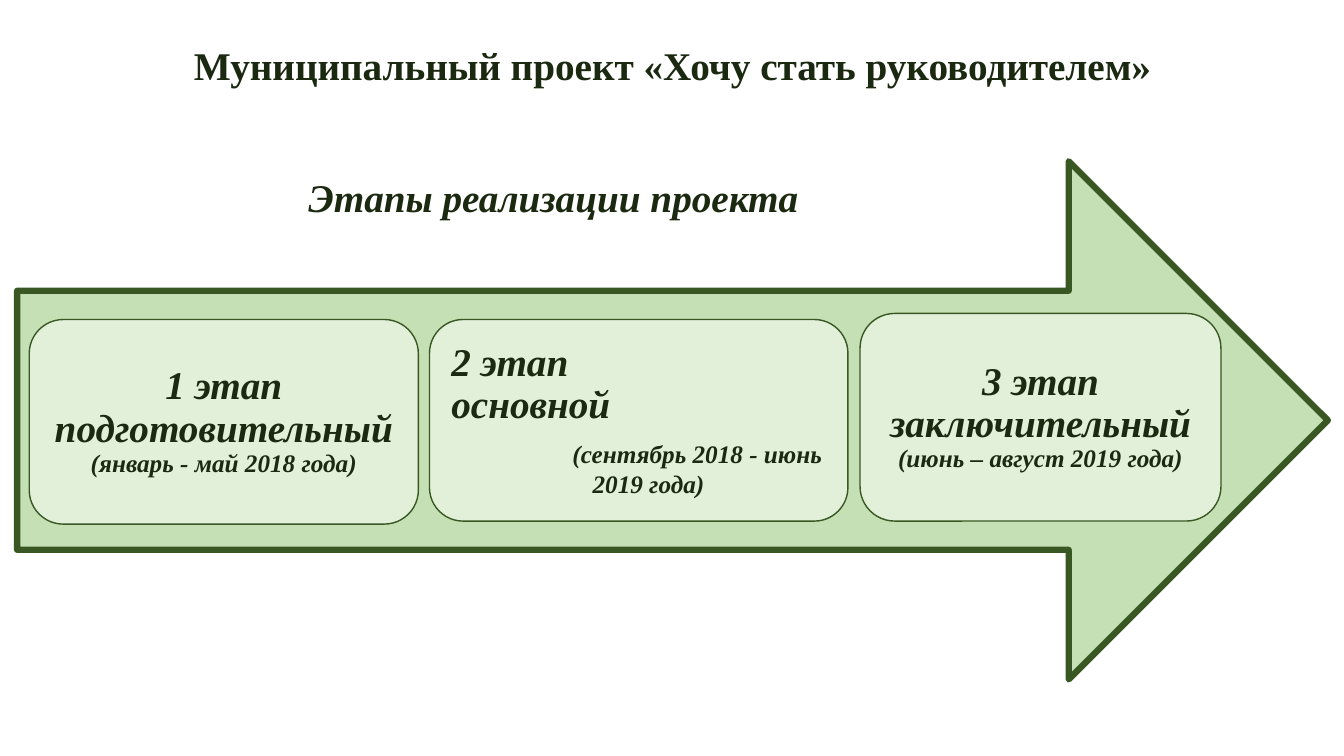
from lxml import etree
from pptx import Presentation
from pptx.dml.color import RGBColor
from pptx.enum.shapes import MSO_SHAPE
from pptx.enum.text import MSO_ANCHOR, PP_ALIGN
from pptx.oxml.ns import qn
from pptx.util import Inches, Pt

ARROW, CARD = MSO_SHAPE.RIGHT_ARROW, MSO_SHAPE.ROUNDED_RECTANGLE
LEFT, CENTER, JUSTIFY = PP_ALIGN.LEFT, PP_ALIGN.CENTER, PP_ALIGN.JUSTIFY
MIDDLE = MSO_ANCHOR.MIDDLE
COLORS = {"text": "1B2911", "outline": "385723", "arrow": "C5E0B4", "card": "E2F0D9"}
FONT = "Times New Roman"
STAGES = [
    ((0.29, 3.17, 3.86, 2.03), "1 этап подготовительный", "(январь - май 2018 года)", False),
    ((4.26, 3.17, 4.15, 2), "2 этап\tосновной", "(сентябрь 2018 - июнь 2019 года)", True),
    ((8.53, 3.11, 3.58, 2.06), "3 этап заключительный", "(июнь – август 2019 года)", False),
]


def write(para, text, size, align, spacing=1.0, italic=True):
    """Fill a paragraph with bold text in the slide's font."""
    para.text = text
    para.alignment = align
    para.line_spacing = spacing
    font = para.font
    font.name, font.size, font.bold, font.italic = FONT, Pt(size), True, italic
    font.color.rgb = RGBColor.from_string(COLORS["text"])


def indent(para, left, first):
    """Set the left margin and first-line indent of a paragraph."""
    properties = para._p.get_or_add_pPr()
    properties.set("marL", str(Inches(left)))
    properties.set("indent", str(Inches(first)))


def add_tab(para, position):
    """Add a left tab stop to a paragraph."""
    tabs = etree.SubElement(para._p.get_or_add_pPr(), qn("a:tabLst"))
    etree.SubElement(tabs, qn("a:tab"), pos=str(Inches(position)), algn="l")


def add_heading(page, box, text, align, spacing, italic, first=0):
    """Add a one-line heading in the given box."""
    frame = page.shapes.add_textbox(*map(Inches, box)).text_frame
    frame.word_wrap = True
    para = frame.paragraphs[0]
    indent(para, 0, first)
    write(para, text, 28, align, spacing, italic)


def add_panel(page, kind, box, fill, width):
    """Add a filled, outlined shape without a shadow."""
    shape = page.shapes.add_shape(kind, *map(Inches, box))
    shape.shadow.inherit = False
    shape.fill.solid()
    shape.fill.fore_color.rgb = RGBColor.from_string(COLORS[fill])
    shape.line.color.rgb = RGBColor.from_string(COLORS["outline"])
    shape.line.width = Pt(width)
    etree.SubElement(shape.element.spPr.get_or_add_ln(), qn("a:round"))
    return shape


def add_stage(page, box, name, dates, spread):
    """Add a stage card, with its name centred or spread across the card."""
    frame = add_panel(page, CARD, box, "card", 1).text_frame
    frame.word_wrap = True
    frame.vertical_anchor = MIDDLE
    frame.margin_left = frame.margin_right = Inches(0.12)
    frame.margin_top = frame.margin_bottom = Inches(0.12)
    heading, period = frame.paragraphs[0], frame.add_paragraph()
    if spread:
        add_tab(heading, 2.23)
        indent(period, 1.4, -0.2)
        period.space_before = Pt(8)
    align = LEFT if spread else CENTER
    write(heading, name, 28, align, 0.9)
    write(period, dates, 18, align, 1.0 if spread else 0.9)


def build_slide(page):
    """Place the headings, the arrow and the three stages."""
    add_heading(page, (2.47, 1.44, 9.74, 0.81), "Этапы реализации проекта",
                JUSTIFY, 1.5, True, 0.49)
    add_heading(page, (0.17, 0.36, 13, 0.57),
                "Муниципальный проект «Хочу стать руководителем»", CENTER, 1.0, False)
    add_panel(page, ARROW, (0.17, 1.6, 13, 5.14), "arrow", 4.5)
    for stage in STAGES:
        add_stage(page, *stage)


def main():
    """Build the deck and save it."""
    deck = Presentation()
    deck.slide_width, deck.slide_height = Inches(13.33), Inches(7.5)
    build_slide(deck.slides.add_slide(deck.slide_layouts[6]))
    deck.save("out.pptx")


if __name__ == "__main__":
    main()
